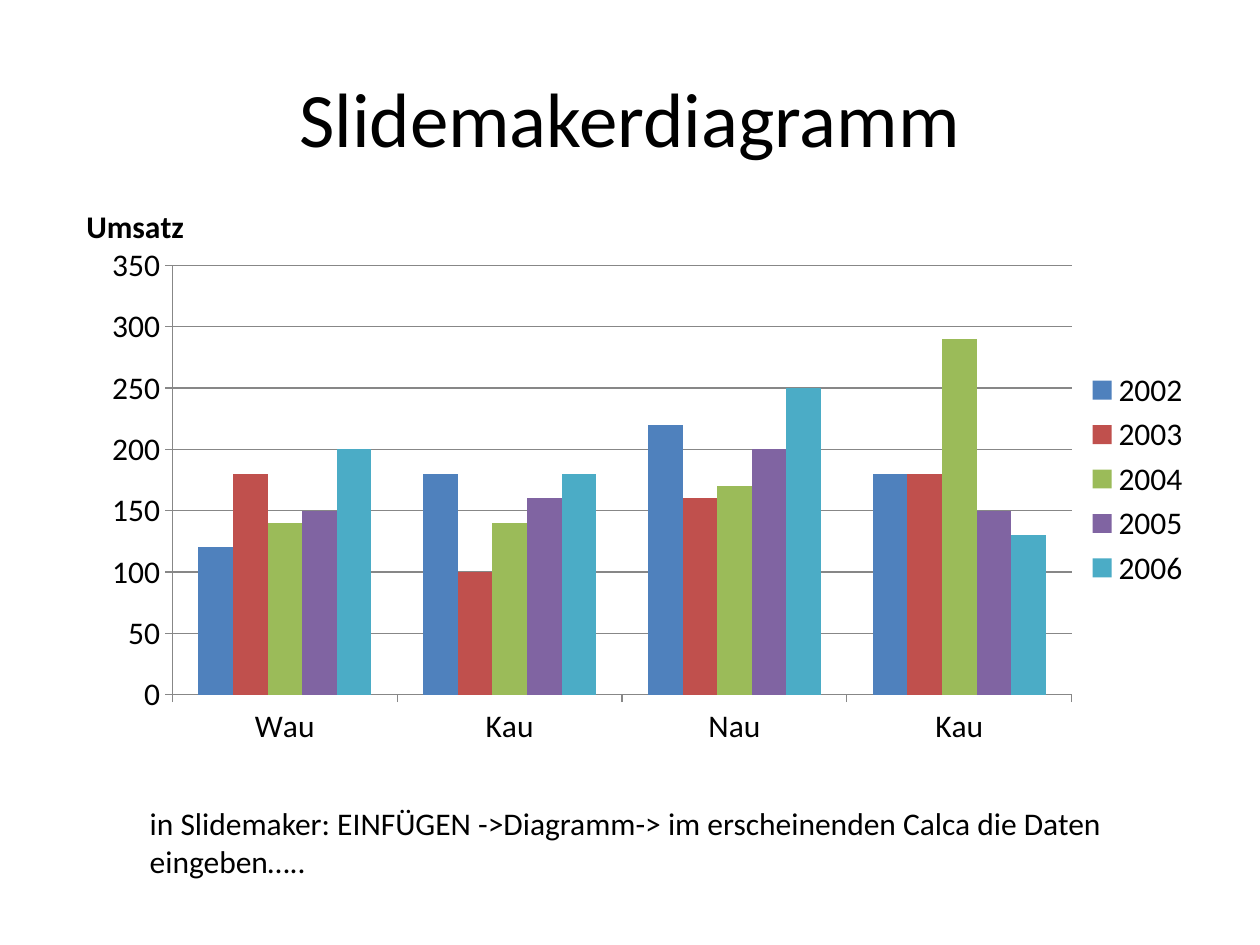
import pptx
import pptx.chart.data
import pptx.dml.color
import pptx.enum.chart
import pptx.enum.text
import pptx.oxml
import pptx.oxml.ns
import pptx.util

RGBColor = pptx.dml.color.RGBColor
BLACK = RGBColor(0, 0, 0)
WHITE = RGBColor(255, 255, 255)
GRAY = RGBColor(0x87, 0x87, 0x87)
BLUE = RGBColor(0x4F, 0x81, 0xBD)
RED = RGBColor(0xC0, 0x50, 0x4D)
GREEN = RGBColor(0x9B, 0xBB, 0x59)
PURPLE = RGBColor(0x80, 0x64, 0xA2)
TEAL = RGBColor(0x4B, 0xAC, 0xC6)

REGIONS = ["Wau", "Kau", "Nau", "Kau"]
SALES = [
    ("2002", (120, 180, 220, 180), BLUE),
    ("2003", (180, 100, 160, 180), RED),
    ("2004", (140, 140, 170, 290), GREEN),
    ("2005", (150, 160, 200, 150), PURPLE),
    ("2006", (200, 180, 250, 130), TEAL),
]


def format_font(font, size=18, bold=False, color=BLACK, name="Calibri"):
    font.size = pptx.util.Pt(size)
    font.bold = bold
    font.name = name
    font.color.rgb = color


def write_text(tf, text, align=None, **font_format):
    p = tf.paragraphs[0]
    p.alignment = align
    r = p.add_run()
    r.text = text
    format_font(r.font, **font_format)


def set_layout(parent, index, target=None, **shares):
    """Place a chart part by hand, in shares of the chart's size."""
    for old in parent.findall(pptx.oxml.ns.qn("c:layout")):
        parent.remove(old)
    inner = f'<c:layoutTarget val="{target}"/>' if target else ""
    inner += '<c:xMode val="edge"/><c:yMode val="edge"/>'
    inner += "".join(f'<c:{key} val="{value}"/>' for key, value in shares.items())
    parent.insert(index, pptx.oxml.parse_xml(
        f'<c:layout {pptx.oxml.ns.nsdecls("c")}>'
        f"<c:manualLayout>{inner}</c:manualLayout></c:layout>"))


class SlideBuilder:
    """Holds the current slide; boxes are left, top, width, height in shares of its size."""

    def __init__(self, prs):
        self.prs = prs
        self.s = prs.slides.add_slide(prs.slide_layouts[5])
        self.s.background.fill.solid()
        self.s.background.fill.fore_color.rgb = WHITE

    def box(self, left, top, width, height):
        w, h = self.prs.slide_width, self.prs.slide_height
        return int(left * w), int(top * h), int(width * w), int(height * h)

    def title(self, text, *box):
        sp = self.s.shapes.title
        sp.left, sp.top, sp.width, sp.height = self.box(*box)
        sp.text_frame.vertical_anchor = pptx.enum.text.MSO_ANCHOR.MIDDLE
        write_text(sp.text_frame, text, pptx.enum.text.PP_ALIGN.CENTER, size=44)

    def note(self, text, *box):
        tf = self.s.shapes.add_textbox(*self.box(*box)).text_frame
        tf.word_wrap = True
        tf.auto_size = pptx.enum.text.MSO_AUTO_SIZE.SHAPE_TO_FIT_TEXT
        write_text(tf, text)

    def column_chart(self, categories, series, axis_title, *box):
        data = pptx.chart.data.CategoryChartData()
        data.categories = categories
        for name, values, _ in series:
            data.add_series(name, values)
        chart = self.s.shapes.add_chart(
            pptx.enum.chart.XL_CHART_TYPE.COLUMN_CLUSTERED, *self.box(*box), data).chart
        format_font(chart.font)
        chart.has_title = False
        chart.has_legend = True
        chart.legend.position = pptx.enum.chart.XL_LEGEND_POSITION.RIGHT
        chart.legend.include_in_layout = False

        plot = chart.plots[0]
        plot.vary_by_categories = False
        plot.gap_width = 150
        plot.overlap = 0
        for bars, (_, _, color) in zip(plot.series, series):
            bars.format.fill.solid()
            bars.format.fill.fore_color.rgb = color

        value_axis = chart.value_axis
        for axis in (chart.category_axis, value_axis):
            axis.major_tick_mark = pptx.enum.chart.XL_TICK_MARK.OUTSIDE
            axis.format.line.color.rgb = GRAY
        value_axis.minimum_scale, value_axis.maximum_scale = 0, 350
        value_axis.major_unit = 50
        value_axis.major_gridlines.format.line.color.rgb = GRAY

        title = value_axis.axis_title
        write_text(title.text_frame, axis_title, bold=True)
        body = title.element.find(".//" + pptx.oxml.ns.qn("a:bodyPr"))
        body.set("rot", "0")
        body.set("vert", "horz")
        set_layout(title.element, 1, x=0.01, y=0.05)
        plot_area = chart.element.find(".//" + pptx.oxml.ns.qn("c:plotArea"))
        set_layout(plot_area, 0, "inner", x=0.091, y=0.157, w=0.793, h=0.689)


def main():
    prs = pptx.Presentation()
    prs.slide_width = pptx.util.Inches(10)
    prs.slide_height = pptx.util.Inches(7.5)
    slide = SlideBuilder(prs)
    slide.title("Slidemakerdiagramm", 0.05, 0.04, 0.9, 0.167)
    slide.column_chart(REGIONS, SALES, "Umsatz", 0.055, 0.177, 0.9, 0.66)
    slide.note("in Slidemaker: EINFÜGEN ->Diagramm-> im erscheinenden Calca "
               "die Daten eingeben…..", 0.109, 0.844, 0.797, 0.095)
    prs.save("out.pptx")


if __name__ == "__main__":
    main()
